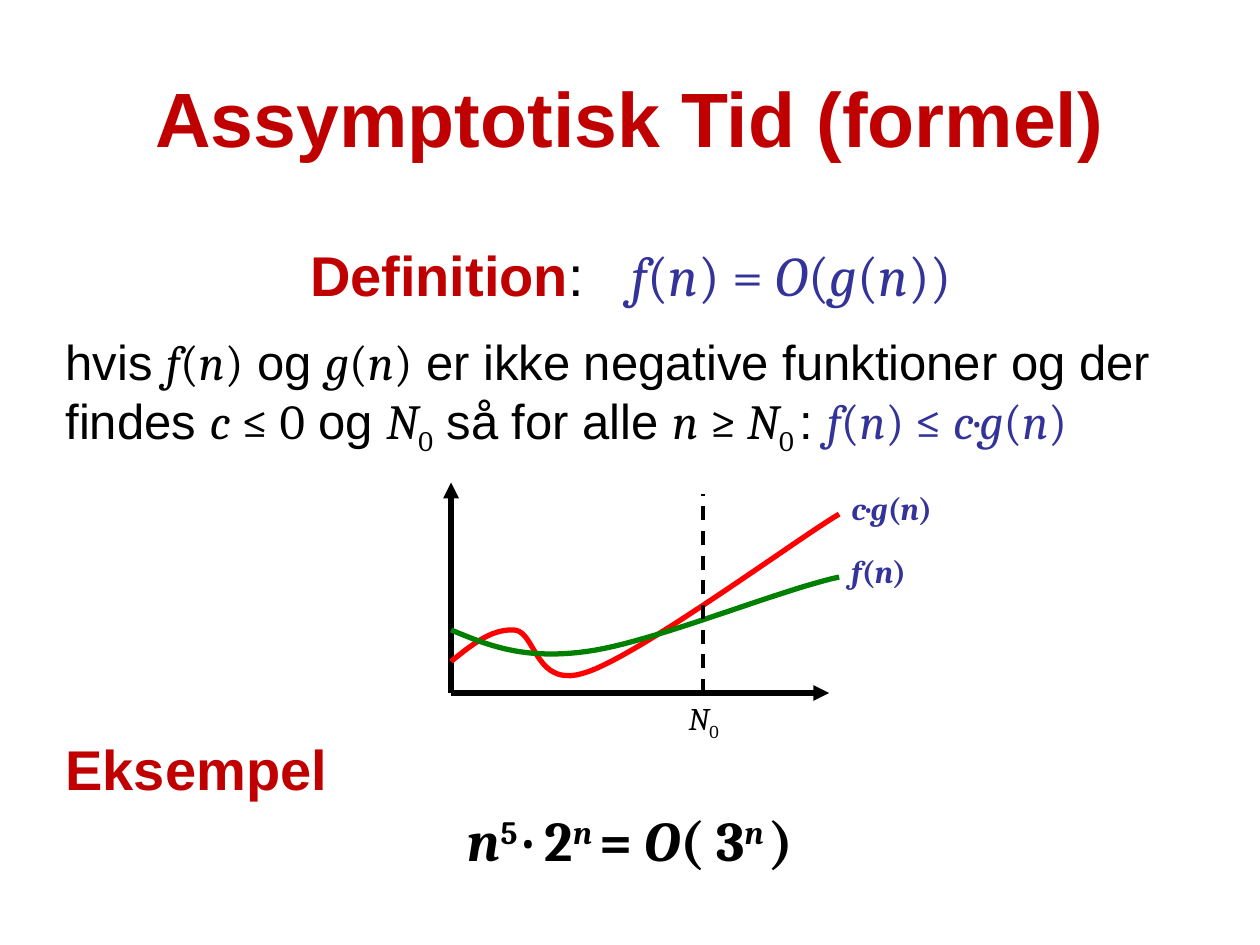
from itertools import groupby

from lxml import etree
from pptx import Presentation
from pptx.dml.color import RGBColor
from pptx.enum.dml import MSO_LINE
from pptx.enum.shapes import MSO_CONNECTOR
from pptx.enum.text import MSO_ANCHOR, MSO_AUTO_SIZE, PP_ALIGN
from pptx.oxml.ns import qn
from pptx.util import Inches, Pt

CENTER, LEFT = PP_ALIGN.CENTER, PP_ALIGN.LEFT
TOP, MIDDLE = MSO_ANCHOR.TOP, MSO_ANCHOR.MIDDLE
NO_FIT, DASH, STRAIGHT = MSO_AUTO_SIZE.NONE, MSO_LINE.DASH, MSO_CONNECTOR.STRAIGHT
DARK_RED, BLUE, BLACK, RED, GREEN = "C00000", "333399", "000000", "FF0000", "008000"
CURVE_STEPS = 24


def color(hex_value):
    """Return the colour for a hex string."""
    return RGBColor.from_string(hex_value)


def set_all(target, values):
    """Set every attribute named in a dict."""
    for name, value in values.items():
        setattr(target, name, value)


def words(text, hex_value=BLACK, bold=False, gap=0):
    """Return one run of prose, with optional extra letter spacing in points."""
    return [(text, "Arial", hex_value, bold, False, 0, gap)]


def formula(text, hex_value=BLACK, bold=False, shift=0):
    """Return runs of mathematics with letters in italics."""
    return [("".join(part), "Cambria", hex_value, bold, italic, shift, 0)
            for italic, part in groupby(text, str.isalpha)]


def write(paragraph, runs, size, align, before=0, spacing=1.0):
    """Fill a paragraph with formatted runs."""
    set_all(paragraph, {"alignment": align, "space_before": Pt(before),
                        "line_spacing": spacing})
    for text, font_name, hex_value, bold, italic, shift, gap in runs:
        run = paragraph.add_run()
        run.text = text
        set_all(run.font, {"name": font_name, "size": Pt(size),
                           "bold": bold, "italic": italic})
        run.font.color.rgb = color(hex_value)
        properties = run.font._element
        for attribute, value in (("baseline", shift * 1000), ("spc", gap * 100)):
            if value:
                properties.set(attribute, str(value))


def place(shape, box):
    """Move a shape to a box given in inches."""
    set_all(shape, dict(zip(("left", "top", "width", "height"), map(Inches, box))))


def add_title(slide, box):
    """Place the slide title."""
    title = slide.shapes.title
    place(title, box)
    set_all(title.text_frame, {"auto_size": NO_FIT, "vertical_anchor": MIDDLE})
    write(title.text_frame.paragraphs[0],
          words("Assymptotisk Tid (formel)", DARK_RED, True), 44, CENTER)


def add_definition(slide, box):
    """Place the definition and the example in the body placeholder."""
    body = slide.placeholders[1]
    place(body, box)
    frame = body.text_frame
    set_all(frame, {"auto_size": NO_FIT, "vertical_anchor": TOP})
    n_zero = formula("N") + formula("0", shift=-25)
    definition = (words("Definition", DARK_RED, True) + words(":")
                  + words(" ", gap=18) + formula("f(n) = O(g(n))", BLUE))
    condition = (words("hvis ") + formula("f(n)") + words(" og ") + formula("g(n)")
                 + words(" er ikke negative funktioner og der findes ")
                 + formula("c ≤ 0") + words(" og ") + n_zero
                 + words(" så for alle ") + formula("n ≥ N")
                 + formula("0 ", shift=-25) + words(": ")
                 + formula("f(n) ≤ c·g(n)", BLUE))
    example = (formula("n", bold=True) + formula("5 ", bold=True, shift=30)
               + formula("· 2", bold=True) + formula("n ", bold=True, shift=30)
               + formula("= O( 3", bold=True) + formula("n ", bold=True, shift=30)
               + formula(")", bold=True))
    lines = [(definition, 32, CENTER, 0), (condition, 28, LEFT, 17),
             (words("Eksempel", DARK_RED, True), 32, LEFT, 166),
             (example, 32, CENTER, 6)]
    for index, (runs, size, align, before) in enumerate(lines):
        paragraph = frame.paragraphs[0] if index == 0 else frame.add_paragraph()
        write(paragraph, runs, size, align, before, 0.9)
        properties = paragraph._p.get_or_add_pPr()
        for attribute in ("marL", "indent"):
            properties.set(attribute, "0")
        etree.SubElement(properties, qn("a:buNone"))


def add_line(slide, start, end, width, arrow=False, dashed=False):
    """Draw a straight black line between two points in inches."""
    line = slide.shapes.add_connector(STRAIGHT, *map(Inches, start + end))
    line.line.color.rgb = color(BLACK)
    line.line.width = Pt(width)
    if dashed:
        line.line.dash_style = DASH
    if arrow:
        etree.SubElement(line.line._get_or_add_ln(), qn("a:tailEnd"), type="triangle")
    etree.SubElement(line._element.spPr, qn("a:effectLst"))


def bezier(points, t):
    """Return the point at t on the Bézier curve with these control points."""
    while len(points) > 1:
        points = [tuple(a + (b - a) * t for a, b in zip(p, q))
                  for p, q in zip(points, points[1:])]
    return points[0]


def add_curve(slide, knots, hex_value):
    """Draw a smooth curve through chained cubic segments."""
    outline = [knots[0]]
    for first in range(0, len(knots) - 1, 3):
        outline += [bezier(knots[first:first + 4], step / CURVE_STEPS)
                    for step in range(1, CURVE_STEPS + 1)]
    outline = [tuple(map(Inches, point)) for point in outline]
    builder = slide.shapes.build_freeform(*outline[0], scale=1.0)
    builder.add_line_segments(outline[1:], close=False)
    curve = builder.convert_to_shape()
    curve.shadow.inherit = False
    curve.fill.background()
    curve.line.color.rgb = color(hex_value)
    curve.line.width = Pt(3)


def add_label(slide, box, runs, align):
    """Place a small formula beside the graph."""
    label = slide.shapes.add_textbox(*map(Inches, box))
    label.text_frame.word_wrap = True
    write(label.text_frame.paragraphs[0], runs, 18, align)


def add_graph(slide, box):
    """Draw the growth curves with axes, threshold and labels."""
    left, top, width, height = box

    def at(x, y):
        return left + x, top + height - y

    add_line(slide, at(0, 0), at(0, height), 3, arrow=True)
    add_line(slide, at(0, 0), at(width, 0), 3, arrow=True)
    bound = [(0, 0.25), (0.16, 0.38), (0.32, 0.51), (0.5, 0.5), (0.68, 0.49),
             (0.66, 0.01), (1.09, 0.17), (1.52, 0.32), (2.73, 1.21), (3.08, 1.42)]
    function = [(0, 0.5), (0.29, 0.38), (0.57, 0.26), (1.08, 0.33),
                (1.6, 0.4), (2.61, 0.82), (3.08, 0.92)]
    for knots, hex_value in ((bound, RED), (function, GREEN)):
        add_curve(slide, [at(*knot) for knot in knots], hex_value)
    add_line(slide, at(2, 0), at(2, 1.58), 2, dashed=True)
    add_label(slide, (*at(1.67, 0), 0.67, 0.4),
              formula("N") + formula("0", shift=-25), CENTER)
    for text, y, label_width in (("f(n)", 1.17, 0.67), ("c·g(n)", 1.67, 1)):
        add_label(slide, (*at(3.08, y), label_width, 0.4),
                  formula(text, BLUE, True), LEFT)


def main():
    """Build and save the slide."""
    deck = Presentation()
    deck.slide_width, deck.slide_height = Inches(10), Inches(7.5)
    slide = deck.slides.add_slide(deck.slide_layouts[1])
    add_title(slide, (0.5, 0.3, 9, 1.25))
    add_definition(slide, (0.42, 1.92, 9.17, 5.58))
    add_graph(slide, (3.58, 3.83, 3, 1.67))
    deck.save("out.pptx")


if __name__ == "__main__":
    main()
